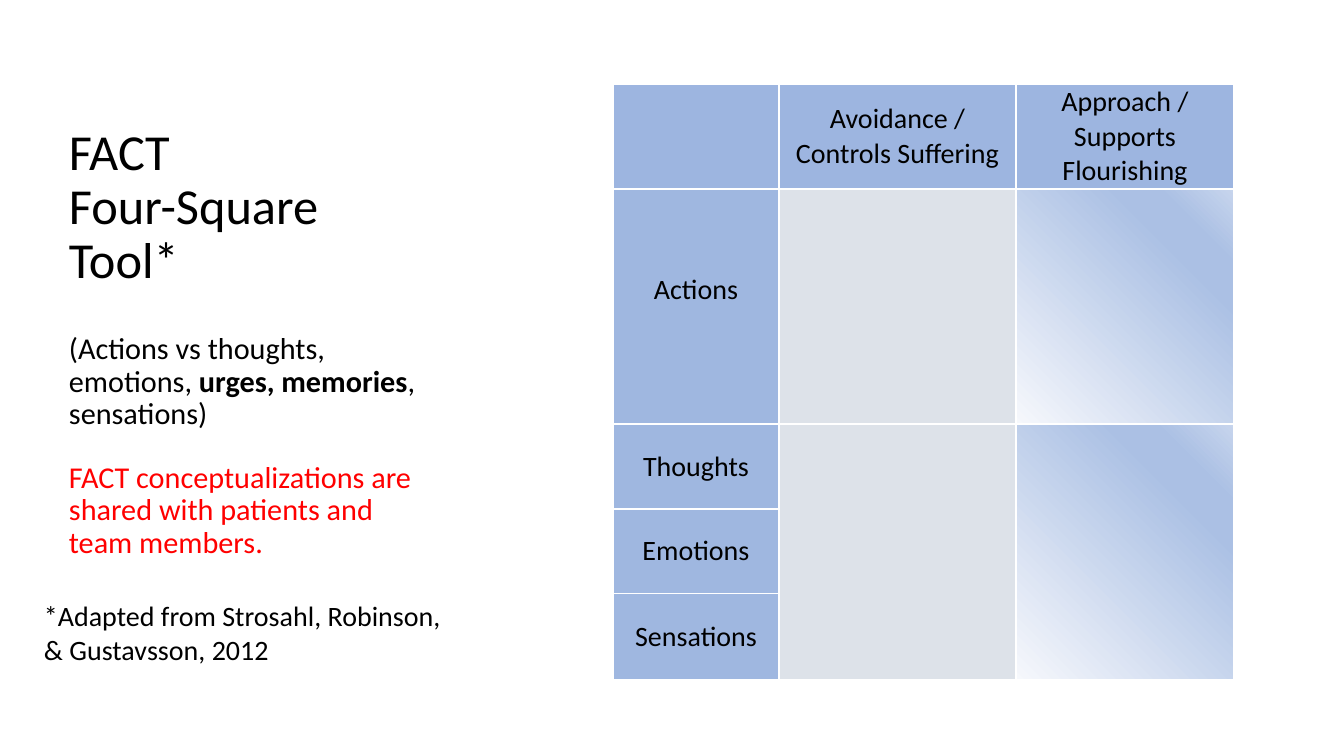
import pptx
import pptx.util
import pptx.dml.color
import pptx.enum.text
import pptx.oxml
import pptx.oxml.ns

PX = 914400 / 100.8
FONT = "Calibri"
COLORS = {"text": "000000", "accent": "FF0000", "blue": "4472C4",
          "gray": "D6DCE5", "border": "FFFFFF"}

# Each paragraph: space before in points, then runs of (text, format)
TITLE = [
    (0, [("FACT", {"size": 36})]),
    (0, [("Four-Square Tool*", {"size": 36})]),
    (31, [("(Actions vs thoughts, emotions, ", {"size": 21.6}),
          ("urges, memories", {"size": 21.6, "bold": True}),
          (", sensations)", {"size": 21.6})]),
    (22, [("FACT conceptualizations are shared with patients and team members.",
           {"size": 21.6, "color": "accent"})]),
]
FOOTNOTE = ["*Adapted from Strosahl, Robinson,", "& Gustavsson, 2012"]
HEADERS = ["", "Avoidance / Controls Suffering", "Approach / Supports Flourishing"]
ROW_LABELS = ["Actions", "Thoughts", "Emotions", "Sensations"]
COL_WIDTHS = [166, 237, 218]
ROW_HEIGHTS = [105, 235, 85, 85, 86]
GRADIENT = [(0, "F6F8FC"), (74, "ABC0E4"), (83, "ABC0E4"), (100, "C7D5ED")]
LABEL_LIFT = 34  # raises "Actions" above the middle of its tall cell

ANCHOR = pptx.enum.text.MSO_ANCHOR
CENTER = pptx.enum.text.PP_ALIGN.CENTER
NS = pptx.oxml.ns.nsdecls("a")


def px(n):
    return pptx.util.Emu(round(n * PX))


def add_text(p, text, size=20, color="text", bold=False, align=None):
    r = p.add_run()
    r.text = text
    r.font.name = FONT
    r.font.size = pptx.util.Pt(size)
    r.font.bold = bold
    r.font.color.rgb = pptx.dml.color.RGBColor.from_string(COLORS[color])
    if align is not None:
        p.alignment = align


def add_box(s, left, top, width, height, anchor):
    tf = s.shapes.add_textbox(px(left), px(top), px(width), px(height)).text_frame
    tf.word_wrap = True
    tf.vertical_anchor = anchor
    return tf


def next_paragraph(tf, i):
    return tf.add_paragraph() if i else tf.paragraphs[0]


def solid_xml(color, alpha):
    return (f'<a:solidFill {NS}><a:srgbClr val="{COLORS[color]}">'
            f'<a:alpha val="{alpha * 1000}"/></a:srgbClr></a:solidFill>')


def gradient_xml():
    stops = "".join(f'<a:gs pos="{pos * 1000}"><a:srgbClr val="{c}"/></a:gs>'
                    for pos, c in GRADIENT)
    return (f'<a:gradFill {NS} rotWithShape="1"><a:gsLst>{stops}</a:gsLst>'
            f'<a:lin ang="{315 * 60000}" scaled="0"/></a:gradFill>')


def style_cell(cell, fill_xml):
    """Give the cell white 1 pt borders and the given fill."""
    tcPr = cell._tc.get_or_add_tcPr()
    for side in ("lnL", "lnR", "lnT", "lnB"):
        tcPr.append(pptx.oxml.parse_xml(
            f'<a:{side} {NS} w="12700">{solid_xml("border", 100)}</a:{side}>'))
    tcPr.append(pptx.oxml.parse_xml(fill_xml))


def add_four_square(s, left, top):
    table = s.shapes.add_table(
        len(ROW_HEIGHTS), len(COL_WIDTHS), px(left), px(top),
        px(sum(COL_WIDTHS)), px(sum(ROW_HEIGHTS))).table
    table.first_row = table.horz_banding = False
    for col, width in zip(table.columns, COL_WIDTHS):
        col.width = px(width)
    for row, height in zip(table.rows, ROW_HEIGHTS):
        row.height = px(height)

    grid = [HEADERS] + [[label, "", ""] for label in ROW_LABELS]
    body_fills = [solid_xml("blue", 51), solid_xml("gray", 82), gradient_xml()]
    for i, texts in enumerate(grid):
        for j, text in enumerate(texts):
            cell = table.cell(i, j)
            cell.margin_left = cell.margin_right = px(5)
            cell.margin_top = cell.margin_bottom = 0
            cell.vertical_anchor = ANCHOR.MIDDLE
            if text:
                add_text(cell.text_frame.paragraphs[0], text, align=CENTER)
            style_cell(cell, body_fills[j] if i else solid_xml("blue", 52))
    table.cell(1, 0).margin_bottom = px(LABEL_LIFT)
    for j in (1, 2):
        table.cell(2, j).merge(table.cell(4, j))


def main():
    prs = pptx.Presentation()
    prs.slide_width, prs.slide_height = px(1344), px(756)
    s = prs.slides.add_slide(prs.slide_layouts[6])

    tf = add_box(s, 59, 86, 370, 479, ANCHOR.BOTTOM)
    for i, (gap, runs) in enumerate(TITLE):
        p = next_paragraph(tf, i)
        p.line_spacing = 0.9
        p.space_before = pptx.util.Pt(gap)
        for text, fmt in runs:
            add_text(p, text, **fmt)

    add_four_square(s, 613, 84)

    tf = add_box(s, 34, 594, 420, 109, ANCHOR.TOP)
    for i, line in enumerate(FOOTNOTE):
        add_text(next_paragraph(tf, i), line)

    prs.save("out.pptx")


if __name__ == "__main__":
    main()
